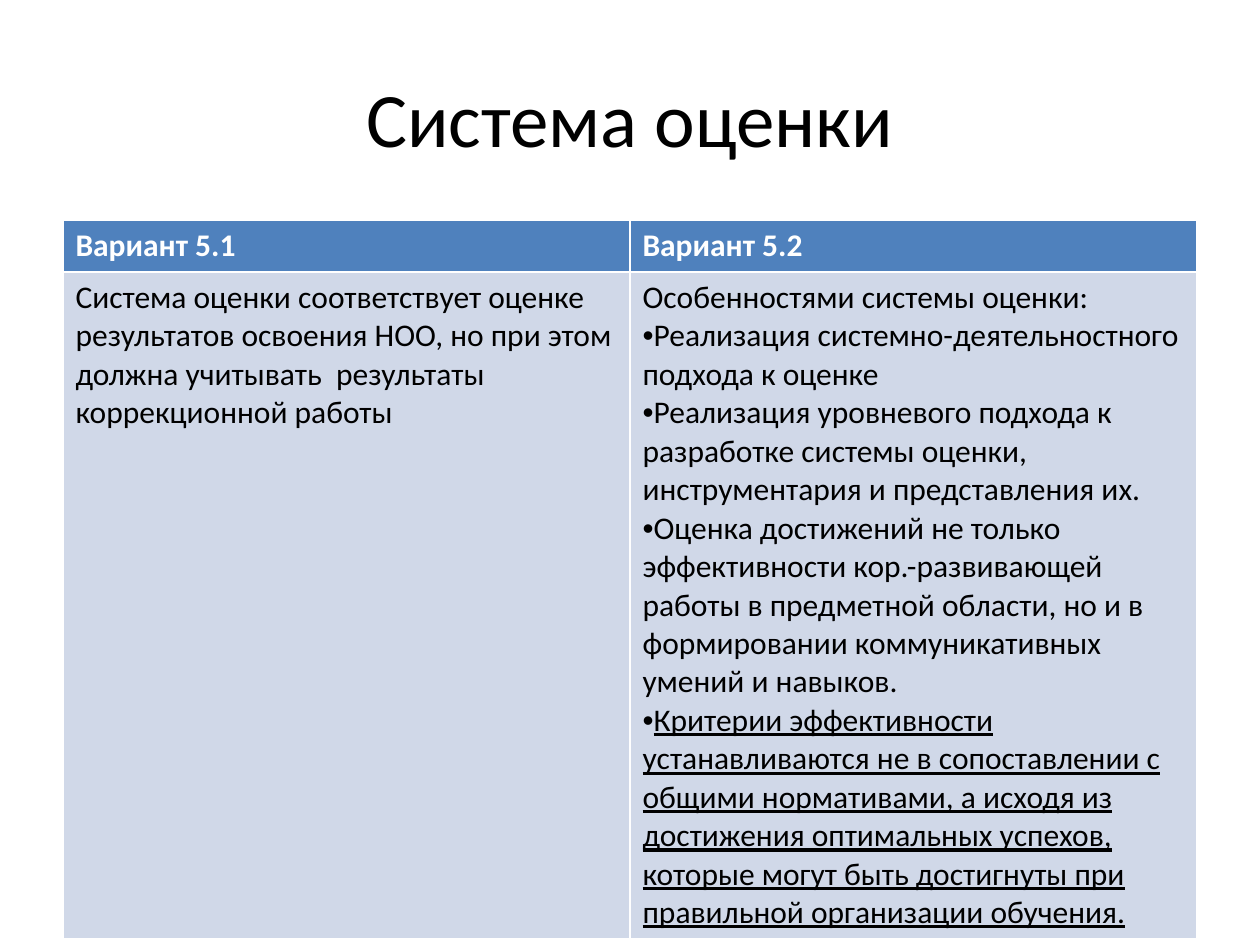
from lxml.etree import SubElement
from pptx import Presentation
from pptx.dml.color import RGBColor as RGB
from pptx.enum.text import MSO_ANCHOR as Anchor, PP_ALIGN as Align
from pptx.oxml.ns import qn
from pptx.util import Inches, Pt

COLORS = {"text": "000000", "light": "FFFFFF", "head": "4F81BD", "body": "D0D8E8"}
FONT = "Calibri"

HEADS = ["Вариант 5.1", "Вариант 5.2"]
LEFT = ["Система оценки соответствует оценке результатов освоения НОО, но при этом "
        "должна учитывать  результаты коррекционной работы"]
RIGHT = [
    "Особенностями системы оценки:",
    "Реализация системно-деятельностного подхода к оценке",
    "Реализация уровневого подхода к разработке системы оценки, "
    "инструментария и представления их.",
    "Оценка достижений не только эффективности кор.-развивающей работы в предметной "
    "области, но и в формировании коммуникативных умений и навыков.",
    "Критерии эффективности устанавливаются не в сопоставлении с общими нормативами, "
    "а исходя из достижения оптимальных успехов, которые могут быть достигнуты при "
    "правильной организации обучения.",
]


class Page:
    def __init__(self, slide):
        self.slide = slide

    def style(self, para, size, color, bold=False):
        font = para.font
        font.name, font.size, font.bold = FONT, Pt(size), bold
        font.color.rgb = RGB.from_string(COLORS[color])

    def title(self, text, left, top, width, height):
        shape = self.slide.shapes.title
        shape.left, shape.top = Inches(left), Inches(top)
        shape.width, shape.height = Inches(width), Inches(height)
        frame = shape.text_frame
        frame.text = text
        frame.vertical_anchor = Anchor.MIDDLE
        para = frame.paragraphs[0]
        para.alignment = Align.CENTER
        self.style(para, 44, "text")

    def bullet(self, para):
        props = para._p.get_or_add_pPr()
        props.set("marL", "0")
        props.set("indent", "0")
        SubElement(props, qn("a:buFont"), typeface="Arial")
        SubElement(props, qn("a:buChar"), char="•")

    def cell(self, cell, lines, fill, color, bold=False):
        """Fill a cell; every line after the first gets a bullet."""
        cell.fill.solid()
        cell.fill.fore_color.rgb = RGB.from_string(COLORS[fill])
        frame = cell.text_frame
        frame.text = "\n".join(lines)
        for i, para in enumerate(frame.paragraphs):
            if i:
                self.bullet(para)
            self.style(para, 18, color, bold)

    def table(self, heads, bodies, left, top, width, heights):
        table = self.slide.shapes.add_table(
            2, len(heads), Inches(left), Inches(top),
            Inches(width), Inches(sum(heights))).table
        for row, height in zip(table.rows, heights):
            row.height = Inches(height)
        for col, (head, body) in enumerate(zip(heads, bodies)):
            self.cell(table.cell(0, col), [head], "head", "light", True)
            self.cell(table.cell(1, col), body, "body", "text")
        return table


def main():
    prs = Presentation()
    prs.slide_width, prs.slide_height = Inches(10), Inches(7.5)
    page = Page(prs.slides.add_slide(prs.slide_layouts[5]))
    page.title("Система оценки", 0.5, 0.3, 9, 1.25)
    table = page.table(HEADS, [LEFT, RIGHT], 0.5, 1.75, 9, [0.41, 5.2])
    last = table.cell(1, 1).text_frame.paragraphs[-1]
    last.runs[0].font.underline = True
    prs.save("out.pptx")


if __name__ == "__main__":
    main()
